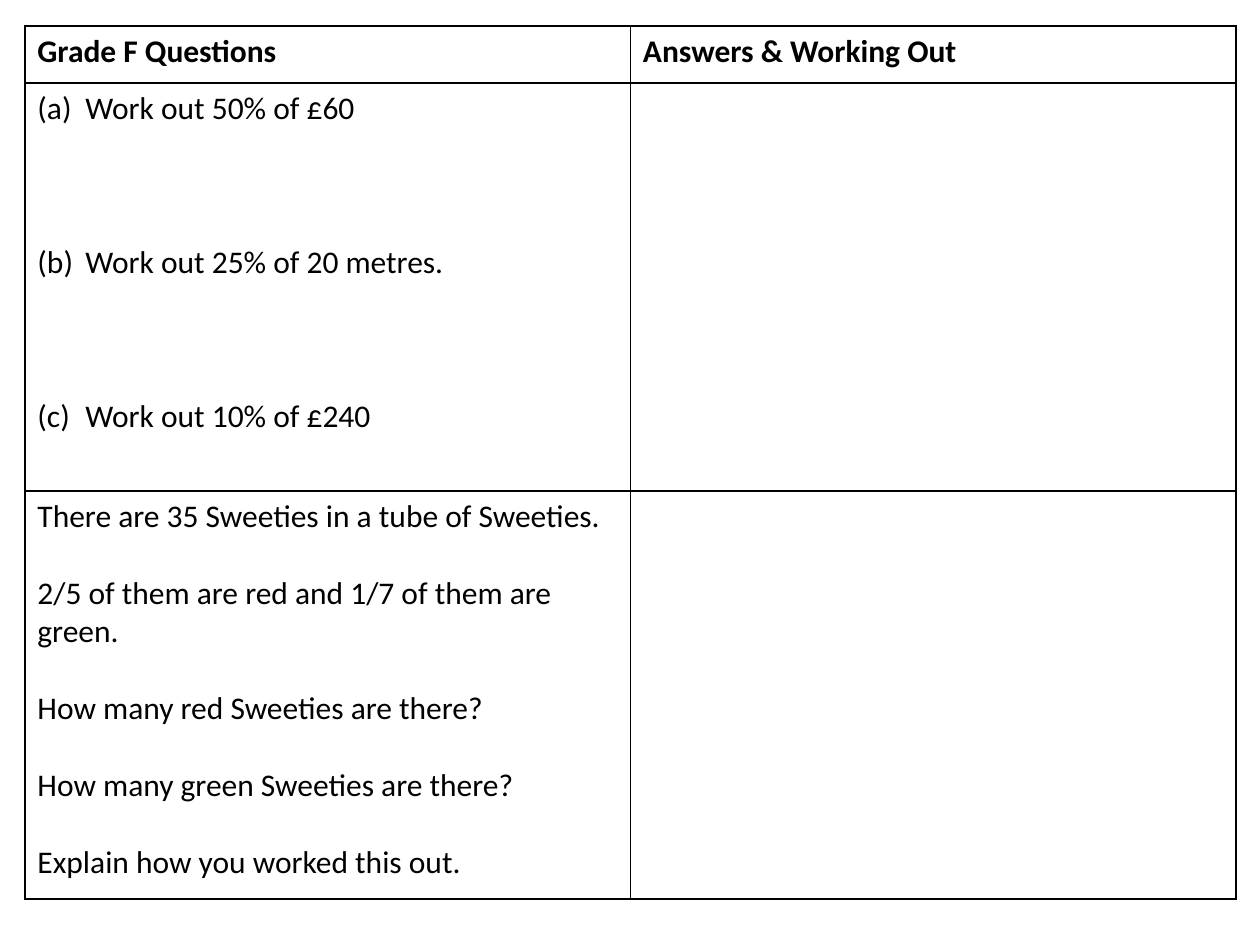
from lxml import etree
from pptx import Presentation
from pptx.dml.color import RGBColor
from pptx.oxml.ns import qn
from pptx.util import Pt

BLACK = RGBColor(0, 0, 0)
FONT = "Calibri"
SIZE = Pt(18)
LINE = 22
HANG = Pt(27.4)
EDGE = Pt(1)
SIDES = ("a:lnL", "a:lnR", "a:lnT", "a:lnB")
LEFT, TOP = Pt(14.2), Pt(15)
COLS = [Pt(346)] * 2
ROWS = [Pt(32.4), Pt(233.2), Pt(233.2)]

HEADS = ["Grade F Questions", "Answers & Working Out"]
PARTS = [
    "(a)\tWork out 50% of £60",
    "Work out 25% of 20 metres.",
    "Work out 10% of £240",
]
SWEETS = [
    "There are 35 Sweeties in a tube of Sweeties.",
    "2/5 of them are red and 1/7 of them are green.",
    "How many red Sweeties are there?",
    "How many green Sweeties are there?",
    "Explain how you worked this out.",
]


def add_edges(cell):
    props = cell._tc.get_or_add_tcPr()
    for spot, side in enumerate(SIDES):
        line = etree.Element(qn(side), w=str(EDGE))
        fill = etree.SubElement(line, qn("a:solidFill"))
        etree.SubElement(fill, qn("a:srgbClr"), val=str(BLACK))
        props.insert(spot, line)


def write(cell, lines, gap=0, bold=False):
    frame = cell.text_frame
    frame.text = "\n".join(lines)
    for para in frame.paragraphs[1:]:
        para.space_before = Pt(gap * LINE)
    for para in frame.paragraphs:
        for run in para.runs:
            font = run.font
            font.name, font.size, font.bold = FONT, SIZE, bold
            font.color.rgb = BLACK


def indent(para):
    props = para._p.get_or_add_pPr()
    props.set("marL", str(HANG))
    props.set("indent", str(-HANG))
    return props


def number(para, start):
    props = indent(para)
    etree.SubElement(props, qn("a:buFont"), typeface="+mj-lt")
    etree.SubElement(props, qn("a:buAutoNum"),
                     type="alphaLcParenBoth", startAt=str(start))


def add_grid(slide):
    frame = slide.shapes.add_table(
        len(ROWS), len(COLS), LEFT, TOP, sum(COLS), sum(ROWS))
    table = frame.table
    table.first_row = False
    table.horz_banding = False
    for col, width in zip(table.columns, COLS):
        col.width = width
    for row, height in zip(table.rows, ROWS):
        row.height = height
    for cell in table.iter_cells():
        cell.fill.background()
        add_edges(cell)
    return table


def main():
    deck = Presentation()
    deck.slide_width, deck.slide_height = Pt(720), Pt(540)
    slide = deck.slides.add_slide(deck.slide_layouts[6])
    table = add_grid(slide)
    for col, head in enumerate(HEADS):
        write(table.cell(0, col), [head], bold=True)
    sums = table.cell(1, 0)
    write(sums, PARTS, gap=3)
    first, *rest = sums.text_frame.paragraphs
    indent(first)
    for para in rest:
        number(para, 2)
    write(table.cell(2, 0), SWEETS, gap=1)
    deck.save("out.pptx")


if __name__ == "__main__":
    main()
